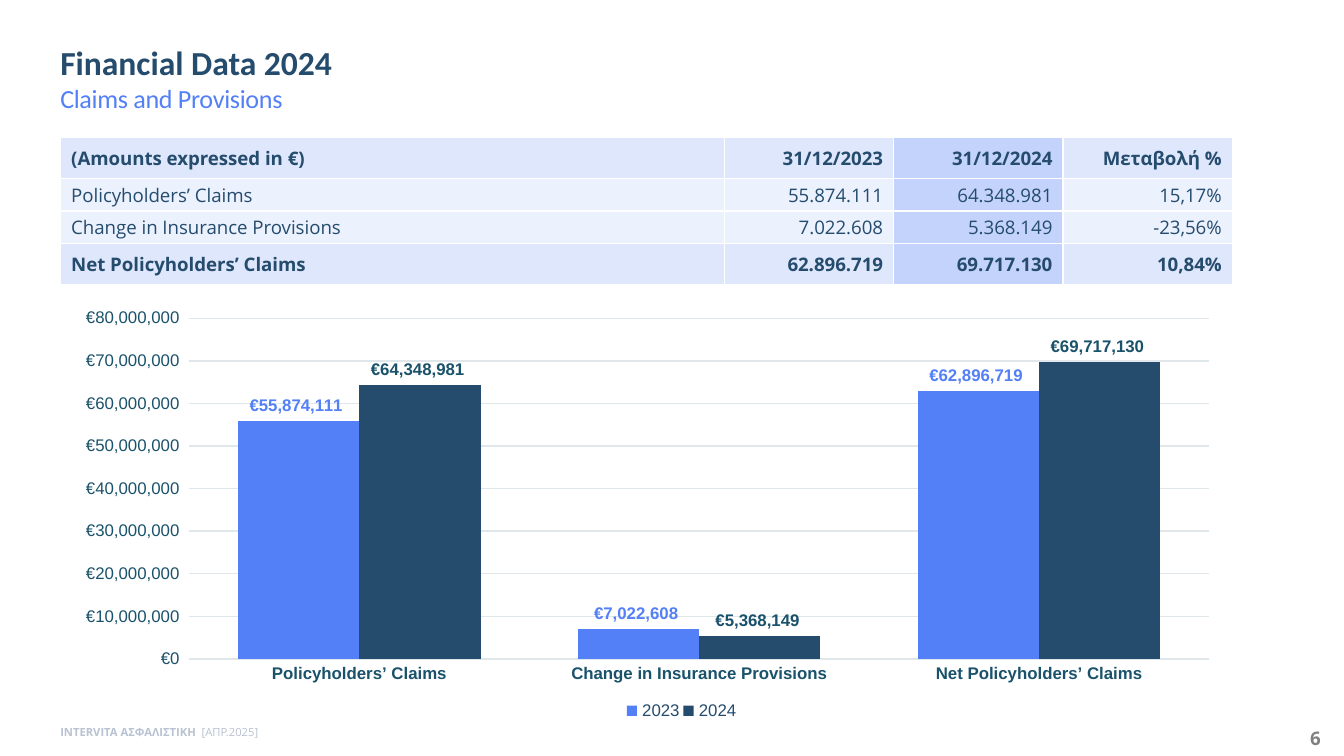
from lxml import etree
from pptx import Presentation
from pptx.chart.data import CategoryChartData
from pptx.dml.color import RGBColor
from pptx.enum.chart import XL_CHART_TYPE, XL_LABEL_POSITION, XL_LEGEND_POSITION, XL_TICK_MARK
from pptx.enum.text import MSO_ANCHOR, PP_ALIGN
from pptx.oxml import parse_xml
from pptx.oxml.ns import nsdecls, qn
from pptx.util import Inches, Pt

COLUMNS = XL_CHART_TYPE.COLUMN_CLUSTERED
OUTSIDE_END = XL_LABEL_POSITION.OUTSIDE_END
BOTTOM = XL_LEGEND_POSITION.BOTTOM
NO_TICK = XL_TICK_MARK.NONE
MIDDLE = MSO_ANCHOR.MIDDLE
LEFT, RIGHT = PP_ALIGN.LEFT, PP_ALIGN.RIGHT

NAVY = RGBColor(0x25, 0x4C, 0x6D)
BLUE = RGBColor(0x54, 0x80, 0xF7)
TEAL = RGBColor(0x1A, 0x52, 0x6B)
SLATE = RGBColor(0x43, 0x57, 0x61)
GREY = RGBColor(0x80, 0x80, 0x80)
FOOTER_GREY = RGBColor(0xB8, 0xC2, 0xD2)
GRID = RGBColor(0xE0, 0xE7, 0xEA)
BAND = RGBColor(0xDF, 0xE7, 0xFD)
LIGHT_BAND = RGBColor(0xEC, 0xF1, 0xFE)
HIGHLIGHT = RGBColor(0xC4, 0xD3, 0xFC)

EURO_FORMAT = '"€"#,##0_);[Red]\\("€"#,##0\\)'


def add_text(paragraph, text, size=10, font="Open Sans", color=NAVY, bold=False):
    run = paragraph.add_run()
    run.text = text
    style_font(run.font, size, font, color, bold)
    return run


def style_font(font, size, name, color, bold=False):
    font.size = Pt(size)
    font.name = name
    font.bold = bold
    font.color.rgb = color


# Widescreen slide, 16:9
prs = Presentation()
prs.slide_width = Inches(10)
prs.slide_height = Inches(10) * 9 // 16
slide = prs.slides.add_slide(prs.slide_layouts[6])

# Title and subtitle
heading = slide.shapes.add_textbox(Inches(0.35), Inches(0.21), Inches(6.69), Inches(0.39)).text_frame
heading.word_wrap = True
heading.margin_left = heading.margin_right = Inches(0.1)
heading.margin_top = heading.margin_bottom = Inches(0.1)
title_line = heading.paragraphs[0]
add_text(title_line, "Financial Data 2024", size=18, font="Calibri", bold=True)
title_line.add_line_break()
subtitle = add_text(title_line, "Claims and Provisions", size=14, font="Calibri", color=BLUE)
subtitle.font._element.set("spc", "-20")

# Page number
page_number = slide.shapes.add_textbox(Inches(9.65), Inches(5.36), Inches(0.28), Inches(0.27)).text_frame
add_text(page_number.paragraphs[0], "6", color=GREY, bold=True)

# Claims table
rows = [
    ("(Amounts expressed in €)", "31/12/2023", "31/12/2024", "Μεταβολή %"),
    ("Policyholders’ Claims", "55.874.111", "64.348.981", "15,17%"),
    ("Change in Insurance Provisions", "7.022.608", "5.368.149", "-23,56%"),
    ("Net Policyholders’ Claims", "62.896.719", "69.717.130", "10,84%"),
]
claims_table = slide.shapes.add_table(
    4, 4, Inches(0.45), Inches(1.02), Inches(8.72), Inches(1.1)).table
for column, width in zip(claims_table.columns, (4.94, 1.26, 1.26, 1.26)):
    column.width = Inches(width)
for row, height in zip(claims_table.rows, (0.31, 0.24, 0.24, 0.31)):
    row.height = Inches(height)

for r, values in enumerate(rows):
    strong = r in (0, 3)
    for c, value in enumerate(values):
        cell = claims_table.cell(r, c)
        cell.vertical_anchor = MIDDLE
        cell.margin_left = cell.margin_right = Inches(0.08)
        cell.margin_top = cell.margin_bottom = 0
        paragraph = cell.text_frame.paragraphs[0]
        paragraph.alignment = RIGHT if c else LEFT
        add_text(paragraph, value, bold=strong)
        outer = {"lnL": c == 0, "lnR": False, "lnT": r == 0, "lnB": r == 3}
        for side, is_outer in outer.items():
            width = Pt(1 if is_outer else 0.75)
            cell._tc.get_or_add_tcPr().append(parse_xml(
                f'<a:{side} {nsdecls("a")} w="{width}"><a:solidFill>'
                f'<a:srgbClr val="FFFFFF"/></a:solidFill></a:{side}>'))
        cell.fill.solid()
        cell.fill.fore_color.rgb = HIGHLIGHT if c == 2 else BAND if strong else LIGHT_BAND

# Footer
footer = slide.shapes.add_textbox(Inches(0.35), Inches(5.35), Inches(1.69), Inches(0.2)).text_frame
add_text(footer.paragraphs[0], "INTERVITA ΑΣΦΑΛΙΣΤΙΚΗ ", size=6, color=FOOTER_GREY, bold=True)
add_text(footer.paragraphs[0], " [ΑΠΡ.2025]", size=6, color=FOOTER_GREY)

# Claims chart
claims_data = CategoryChartData(number_format=EURO_FORMAT)
claims_data.categories = [values[0] for values in rows[1:]]
claims_data.add_series("2023", (55874111, 7022608, 62896719))
claims_data.add_series("2024", (64348981, 5368149, 69717130))
chart = slide.shapes.add_chart(
    COLUMNS, Inches(0.45), Inches(2.24), Inches(8.72), Inches(3.21), claims_data).chart
style_font(chart.font, 10, "Arial", SLATE)
chart.has_title = False
chart.has_legend = True
chart.legend.position = BOTTOM
chart.legend.include_in_layout = False
style_font(chart.legend.font, 9, "Arial", NAVY)

# Columns and their labels
plot = chart.plots[0]
plot.gap_width = 80
plot.overlap = 0
plot.vary_by_categories = False
for series, fill_color, label_color in zip(plot.series, (BLUE, NAVY), (BLUE, TEAL)):
    series.format.fill.solid()
    series.format.fill.fore_color.rgb = fill_color
    labels = series.data_labels
    labels.show_value = True
    labels.position = OUTSIDE_END
    labels.number_format = EURO_FORMAT
    labels.number_format_is_linked = False
    style_font(labels.font, 9, "Arial", label_color, bold=True)

# Axes
category_axis, value_axis = chart.category_axis, chart.value_axis
for axis, bold in ((category_axis, True), (value_axis, False)):
    axis.major_tick_mark = axis.minor_tick_mark = NO_TICK
    style_font(axis.tick_labels.font, 9, "Arial", TEAL, bold)
value_axis.minimum_scale, value_axis.maximum_scale = 0, 80000000
value_axis.major_unit = 10000000
value_axis.tick_labels.number_format = EURO_FORMAT
value_axis.tick_labels.number_format_is_linked = False
value_axis.format.line.fill.background()
for line in (category_axis.format.line, value_axis.major_gridlines.format.line):
    line.color.rgb = GRID
    line.width = Pt(0.75)

# Fixed places of plot area and legend, as fractions of the chart
chart_xml = chart._chartSpace.chart
edges = {"xMode": "edge", "yMode": "edge"}
plot_place = {"layoutTarget": "inner", **edges, "x": "0.11", "y": "0.04", "w": "0.87", "h": "0.79"}
legend_place = {**edges, "x": "0.48", "y": "0.92", "w": "0.1", "h": "0.06"}
for part, index, place in ((chart_xml.plotArea, 0, plot_place),
                           (chart_xml.find(qn("c:legend")), 1, legend_place)):
    for automatic_layout in part.findall(qn("c:layout")):
        part.remove(automatic_layout)
    layout = etree.Element(qn("c:layout"))
    manual = etree.SubElement(layout, qn("c:manualLayout"))
    for tag, value in place.items():
        etree.SubElement(manual, qn(f"c:{tag}")).set("val", value)
    part.insert(index, layout)

prs.save("out.pptx")
